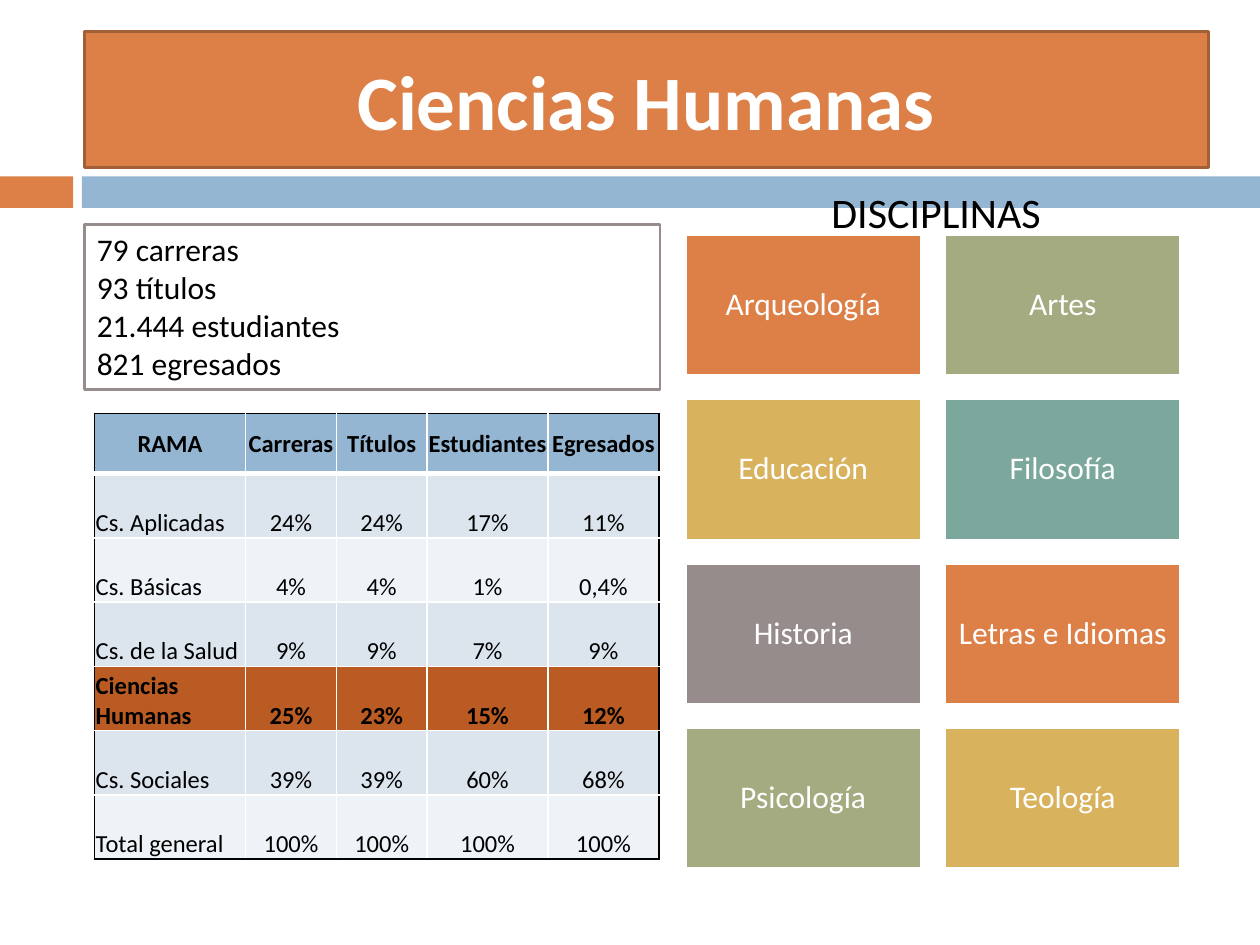
from lxml import etree
from pptx import Presentation
from pptx import util as u
from pptx.dml.color import RGBColor
from pptx.enum import shapes, text
from pptx.oxml.ns import qn


class Theme:
    font = "Calibri"
    white, black = "FFFFFF", "000000"
    orange, rust, edge = "DD8047", "B95B22", "A35F35"
    blue, pale, light = "94B6D2", "DCE5EE", "EEF3F7"
    green, gold, teal, gray = "A5AB81", "D8B25C", "7BA79D", "968C8C"
    head, sub, body, cell = 44, 24, 18, 14


def write(frame, words, size, color=Theme.black, bold=False, align="CENTER",
          anchor="MIDDLE", space=None, after=0):
    """Fill a text frame, one paragraph per line of words."""
    frame.word_wrap = True
    frame.vertical_anchor = getattr(text.MSO_ANCHOR, anchor)
    for i, line in enumerate(words.split("\n")):
        par = frame.paragraphs[0] if i == 0 else frame.add_paragraph()
        par.alignment = getattr(text.PP_ALIGN, align)
        par.line_spacing = space
        par.space_before, par.space_after = u.Pt(0), u.Pt(after)
        run = par.add_run()
        run.text = line
        run.font.name, run.font.size, run.font.bold = Theme.font, u.Pt(size), bold
        run.font.color.rgb = RGBColor.from_string(color)


def box(x, y, w, h, fill, line=None, shape=None):
    """Place a flat rectangle, new or given, with an optional outline."""
    place = [u.Inches(n) for n in (x, y, w, h)]
    if shape is None:
        shape = slide.shapes.add_shape(shapes.MSO_SHAPE.RECTANGLE, *place)
        shape.shadow.inherit = False
    shape.left, shape.top, shape.width, shape.height = place
    shape.fill.solid()
    shape.fill.fore_color.rgb = RGBColor.from_string(fill)
    if line:
        shape.line.color.rgb = RGBColor.from_string(line)
        shape.line.width = u.Pt(1.5)
    else:
        shape.line.fill.background()
    return shape


deck = Presentation()
deck.slide_width, deck.slide_height = u.Inches(10), u.Inches(7.5)
slide = deck.slides.add_slide(deck.slide_layouts[5])

# Stripes and title
box(0, 1.4, 0.58, 0.25, Theme.orange)
box(0.65, 1.4, 9.35, 0.25, Theme.blue)
title = box(0.67, 0.25, 8.92, 1.08, Theme.orange, Theme.edge, slide.shapes.title)
write(title.text_frame, "Ciencias Humanas", Theme.head, Theme.white, bold=True)

# Table of shares by branch
rows = [
    ["RAMA", "Carreras", "Títulos", "Estudiantes", "Egresados"],
    ["Cs. Aplicadas", "24%", "24%", "17%", "11%"],
    ["Cs. Básicas", "4%", "4%", "1%", "0,4%"],
    ["Cs. de la Salud", "9%", "9%", "7%", "9%"],
    ["Ciencias Humanas", "25%", "23%", "15%", "12%"],
    ["Cs. Sociales", "39%", "39%", "60%", "68%"],
    ["Total general", "100%", "100%", "100%", "100%"],
]
widths = [1.2, 0.72, 0.72, 0.96, 0.88]
focus = 4
last_row, last_col = len(rows) - 1, len(widths) - 1
table = slide.shapes.add_table(len(rows), len(widths), u.Inches(0.75), u.Inches(3.28),
                               u.Inches(4.49), u.Inches(3.52)).table
for c, width in enumerate(widths):
    table.columns[c].width = u.Inches(width)
for r, row in enumerate(rows):
    table.rows[r].height = u.Inches(0.51 if r else 0.48)
    if r == 0:
        fill = Theme.blue
    elif r == focus:
        fill = Theme.rust
    else:
        fill = Theme.pale if r % 2 else Theme.light
    for c, words in enumerate(row):
        cell = table.cell(r, c)
        cell.margin_left = cell.margin_right = cell.margin_top = u.Inches(0.01)
        cell.margin_bottom = 0
        write(cell.text_frame, words, Theme.cell, bold=r in (0, focus),
              align="LEFT" if r and c == 0 else "CENTER")
        cell.vertical_anchor = text.MSO_ANCHOR.BOTTOM if r else text.MSO_ANCHOR.MIDDLE
        cell.fill.solid()
        cell.fill.fore_color.rgb = RGBColor.from_string(fill)
        # Black outside, white inside, thicker under the header
        props = cell._tc.get_or_add_tcPr()
        outer = {"L": c == 0, "R": c == last_col, "T": r == 0, "B": r == last_row}
        for i, (side, out) in enumerate(outer.items()):
            thick = (side == "B" and r == 0) or (side == "T" and r == 1)
            line = etree.Element(qn("a:ln" + side), w=str(u.Pt(3 if thick else 1)))
            solid = etree.SubElement(line, qn("a:solidFill"))
            etree.SubElement(solid, qn("a:srgbClr"), val=Theme.black if out else Theme.white)
            props.insert(i, line)

# Grid of disciplines
tiles = [
    ("Arqueología", Theme.orange), ("Artes", Theme.green),
    ("Educación", Theme.gold), ("Filosofía", Theme.teal),
    ("Historia", Theme.gray), ("Letras e Idiomas", Theme.orange),
    ("Psicología", Theme.green), ("Teología", Theme.gold),
]
for i, (name, fill) in enumerate(tiles):
    r, c = divmod(i, 2)
    tile = box(5.44 + 2.06 * c, 1.86 + 1.305 * r, 1.87, 1.12, fill, Theme.white)
    frame = tile.text_frame
    frame.margin_left = frame.margin_right = u.Inches(0.07)
    frame.margin_top = frame.margin_bottom = u.Inches(0.07)
    write(frame, name, Theme.body, Theme.white, space=0.9)

label = slide.shapes.add_textbox(u.Inches(5.7), u.Inches(1.43), u.Inches(3.46), u.Inches(0.5))
write(label.text_frame, "DISCIPLINAS", Theme.sub, anchor="TOP")

# Key figures
facts = box(0.67, 1.78, 4.57, 1.31, Theme.white, Theme.gray)
write(facts.text_frame, "79 carreras\n93 títulos\n21.444 estudiantes\n821 egresados",
      Theme.body, align="LEFT", anchor="TOP")

deck.save("out.pptx")
